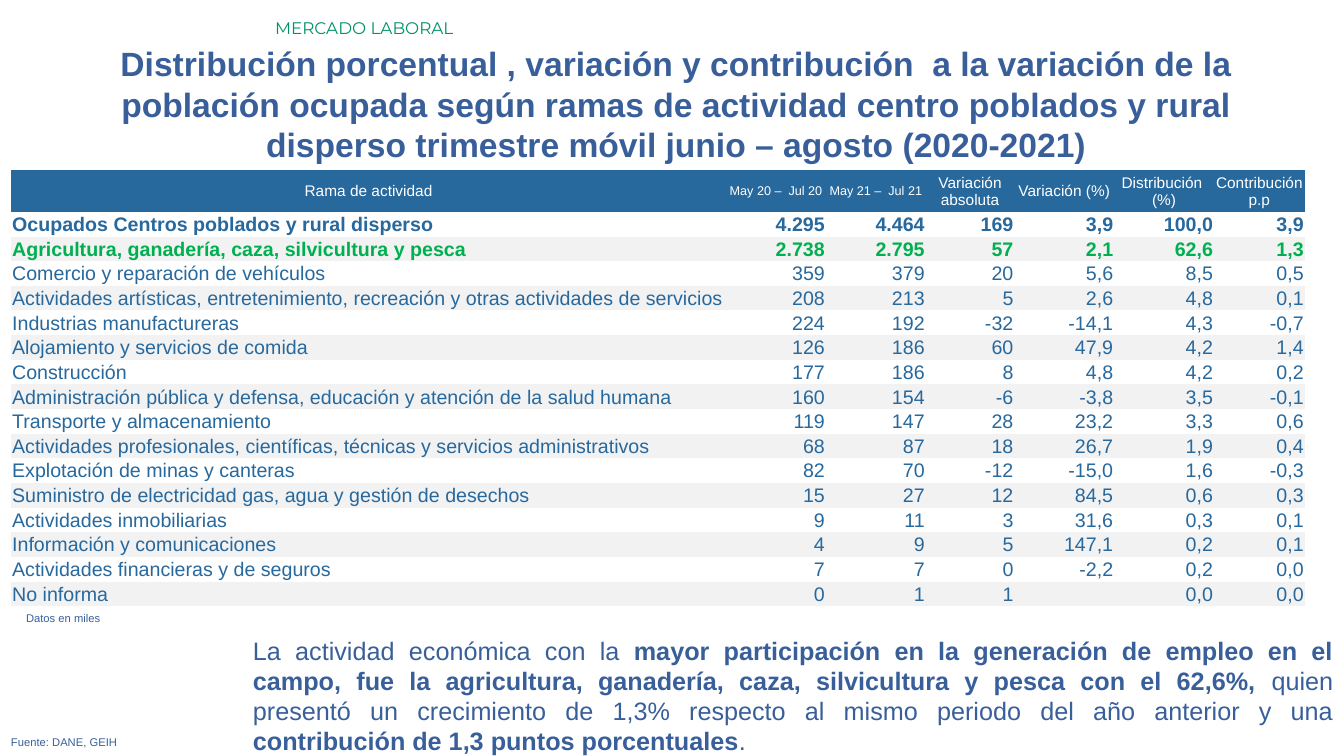
from dataclasses import dataclass

from lxml import etree
from pptx import Presentation
from pptx.dml.color import RGBColor
from pptx.enum.text import MSO_ANCHOR, MSO_AUTO_SIZE, PP_ALIGN
from pptx.oxml.ns import qn
from pptx.util import Inches, Pt

LEFT, CENTER, RIGHT, JUSTIFY = PP_ALIGN.LEFT, PP_ALIGN.CENTER, PP_ALIGN.RIGHT, PP_ALIGN.JUSTIFY
MIDDLE = MSO_ANCHOR.MIDDLE
FIT_SHAPE = MSO_AUTO_SIZE.SHAPE_TO_FIT_TEXT
PLAIN_TABLE = "{2D5ABB26-0587-4C30-8999-92F81FD0307C}"
SLIDE_WIDTH, SLIDE_HEIGHT = Inches(13.33), Inches(7.5)


@dataclass(frozen=True)
class Theme:
    font: str = "Arial"
    label_font: str = "Montserrat"
    ink: str = "395F9B"
    label: str = "009267"
    table: str = "27689D"
    highlight: str = "00B050"
    band: str = "F2F2F2"
    white: str = "FFFFFF"
    title_size: int = 24
    body_size: int = 18
    cell_size: int = 14
    label_size: int = 12
    header_size: int = 11
    period_size: int = 9
    note_size: int = 8


THEME = Theme()

TITLE = (
    "Distribución porcentual , variación y contribución  a la variación de la "
    "población ocupada según ramas de actividad centro poblados y rural "
    "disperso trimestre móvil junio – agosto (2020-2021)"
)
FINDING = [
    ("La actividad económica con la ", False),
    ("mayor participación en la generación de empleo en el campo, fue la agricultura, "
     "ganadería, caza, silvicultura y pesca con el 62,6%, ", True),
    ("quien presentó un crecimiento de 1,3% respecto al mismo periodo del año anterior y una ", False),
    ("contribución de 1,3 puntos porcentuales", True),
    (".", False),
]
COLUMNS = [
    ("Rama de actividad", 53.19, THEME.header_size),
    ("May 20 –  Jul 20", 7.43, THEME.period_size),
    ("May 21 –  Jul 21", 7.43, THEME.period_size),
    ("Variación\nabsoluta", 6.6, THEME.header_size),
    ("Variación (%)", 7.43, THEME.header_size),
    ("Distribución \n(%)", 7.43, THEME.header_size),
    ("Contribución \np.p", 6.75, THEME.header_size),
]
BRANCHES = [
    ("Ocupados Centros poblados y rural disperso", "4.295", "4.464", "169", "3,9", "100,0", "3,9"),
    ("Agricultura, ganadería, caza, silvicultura y pesca", "2.738", "2.795", "57", "2,1", "62,6", "1,3"),
    ("Comercio y reparación de vehículos", "359", "379", "20", "5,6", "8,5", "0,5"),
    ("Actividades artísticas, entretenimiento, recreación y otras actividades de servicios",
     "208", "213", "5", "2,6", "4,8", "0,1"),
    ("Industrias manufactureras", "224", "192", "-32", "-14,1", "4,3", "-0,7"),
    ("Alojamiento y servicios de comida", "126", "186", "60", "47,9", "4,2", "1,4"),
    ("Construcción", "177", "186", "8", "4,8", "4,2", "0,2"),
    ("Administración pública y defensa, educación y atención de la salud humana",
     "160", "154", "-6", "-3,8", "3,5", "-0,1"),
    ("Transporte y almacenamiento", "119", "147", "28", "23,2", "3,3", "0,6"),
    ("Actividades profesionales, científicas, técnicas y servicios administrativos",
     "68", "87", "18", "26,7", "1,9", "0,4"),
    ("Explotación de minas y canteras", "82", "70", "-12", "-15,0", "1,6", "-0,3"),
    ("Suministro de electricidad gas, agua y gestión de desechos", "15", "27", "12", "84,5", "0,6", "0,3"),
    ("Actividades inmobiliarias", "9", "11", "3", "31,6", "0,3", "0,1"),
    ("Información y comunicaciones", "4", "9", "5", "147,1", "0,2", "0,1"),
    ("Actividades financieras y de seguros", "7", "7", "0", "-2,2", "0,2", "0,0"),
    ("No informa", "0", "1", "1", "", "0,0", "0,0"),
]


def across(percent):
    return round(SLIDE_WIDTH * percent / 100)


def down(percent):
    return round(SLIDE_HEIGHT * percent / 100)


def add_span(para, text, size, color, bold=False, font=THEME.font):
    span = para.add_run()
    span.text = text
    span.font.name = font
    span.font.size = Pt(size)
    span.font.bold = bold
    span.font.color.rgb = RGBColor.from_string(color)


def add_text(page, place, spans, size, color=THEME.ink, align=JUSTIFY, font=THEME.font):
    left, top, width, height = place
    box = page.shapes.add_textbox(across(left), down(top), across(width), down(height))
    frame = box.text_frame
    frame.word_wrap = True
    frame.auto_size = FIT_SHAPE
    para = frame.paragraphs[0]
    para.alignment = align
    for text, bold in spans:
        add_span(para, text, size, color, bold, font)


def fill_cell(cell, text, size, color, align, bold=False, fill=None):
    cell.vertical_anchor = MIDDLE
    cell.margin_left = cell.margin_right = cell.margin_top = Inches(0.01)
    cell.margin_bottom = 0
    if fill:
        cell.fill.solid()
        cell.fill.fore_color.rgb = RGBColor.from_string(fill)
    else:
        cell.fill.background()
    frame = cell.text_frame
    for index, line in enumerate(text.split("\n")):
        para = frame.add_paragraph() if index else frame.paragraphs[0]
        para.alignment = align
        if line:
            add_span(para, line, size, color, bold)
        else:
            etree.SubElement(para._p, qn("a:endParaRPr"), sz=str(size * 100))


def add_branch_table(page, left, top, header_height, row_height):
    width = sum(share for _, share, _ in COLUMNS)
    height = header_height + row_height * len(BRANCHES)
    holder = page.shapes.add_table(
        len(BRANCHES) + 1, len(COLUMNS), across(left), down(top), across(width), down(height)
    )
    table = holder.table
    table.first_row = table.horz_banding = False
    table._tbl.find(".//" + qn("a:tableStyleId")).text = PLAIN_TABLE
    table.rows[0].height = down(header_height)
    for column, (heading, share, size) in enumerate(COLUMNS):
        table.columns[column].width = across(share)
        fill_cell(table.cell(0, column), heading, size, THEME.white, CENTER, fill=THEME.table)
    for row, values in enumerate(BRANCHES, start=1):
        table.rows[row].height = down(row_height)
        color = THEME.highlight if row == 2 else THEME.table
        band = THEME.band if row % 2 == 0 else None
        for column, value in enumerate(values):
            align = RIGHT if column else LEFT
            fill_cell(table.cell(row, column), value, THEME.cell_size, color, align, row <= 2, band)


def main():
    deck = Presentation()
    deck.slide_width, deck.slide_height = SLIDE_WIDTH, SLIDE_HEIGHT
    page = deck.slides.add_slide(deck.slide_layouts[6])
    add_text(page, (3.38, 5.07, 93.85, 17.47), [(TITLE, True)], THEME.title_size, align=CENTER)
    add_text(page, (19.73, 1.73, 80.27, 4), [("MERCADO LABORAL", False)], THEME.label_size,
             THEME.label, LEFT, THEME.label_font)
    add_text(page, (18.08, 83.33, 81.85, 17.47), FINDING, THEME.body_size)
    add_text(page, (0.08, 96.67, 96.85, 3.2), [("Fuente: DANE, GEIH", False)], THEME.note_size)
    add_branch_table(page, 0.83, 22.53, header_height=5.5, row_height=3.26)
    add_text(page, (1.2, 80.27, 96.85, 3.2), [("Datos en miles", False)], THEME.note_size)
    deck.save("out.pptx")


if __name__ == "__main__":
    main()
